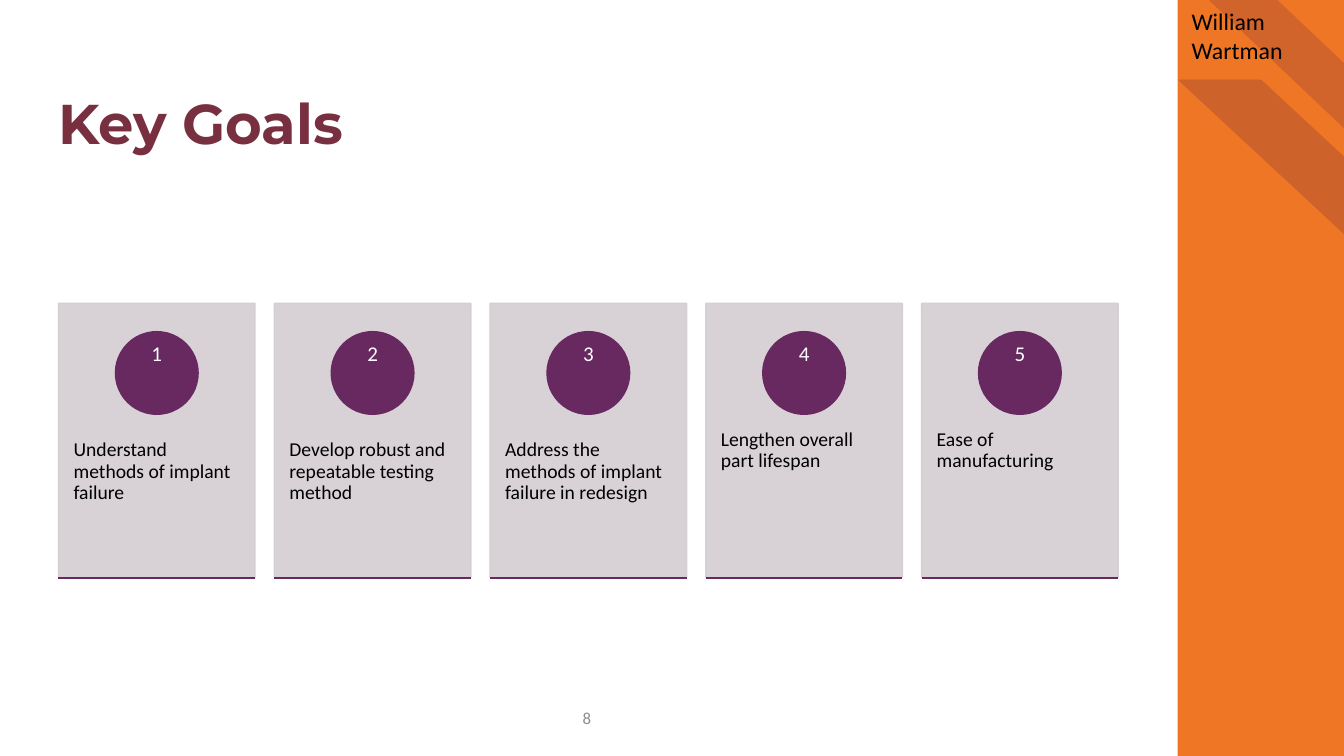
from dataclasses import dataclass

from lxml import etree
from pptx import Presentation
from pptx import util as u
from pptx.dml.color import RGBColor
from pptx.enum import shapes, text
from pptx.oxml import ns


@dataclass(frozen=True)
class Theme:
    orange: str = "EE7624"
    maroon: str = "782F40"
    purple: str = "682860"
    card: str = "D4CDD2"
    black: str = "000000"
    white: str = "FFFFFF"
    gray: str = "8C8C8C"
    heading_font: str = "Montserrat"
    body_font: str = "Calibri"
    title_size: float = 40
    name_size: float = 17
    number_size: float = 15
    goal_size: float = 14
    page_size: float = 12


THEME = Theme()
KIND = shapes.MSO_SHAPE
ALIGN = text.PP_ALIGN
ANCHOR = text.MSO_ANCHOR

GOALS = [
    "Understand methods of implant failure",
    "Develop robust and repeatable testing method",
    "Address the methods of implant failure in redesign",
    "Lengthen overall part lifespan",
    "Ease of manufacturing",
]
CARD_LEFT, CARD_TOP, CARD_W, CARD_H, CARD_PITCH = 0.58, 3.01, 1.95, 2.72, 2.14
CIRCLE, NUMBER_BOX = 0.82, 0.58


def inches(*values):
    return [u.Inches(v) for v in values]


def set_color(fill, color, opacity=100):
    fill.solid()
    fill.fore_color.rgb = RGBColor.from_string(color)
    if opacity < 100:
        clr = fill._xPr.find(".//" + ns.qn("a:srgbClr"))
        etree.SubElement(clr, ns.qn("a:alpha"), val=str(opacity * 1000))


def add_shape(s, kind, box, color, opacity=100, outlined=False):
    sp = s.shapes.add_shape(kind, *inches(*box))
    sp.shadow.inherit = False
    set_color(sp.fill, color, opacity)
    if outlined:
        sp.line.width = u.Pt(1)
        set_color(sp.line.fill, color, opacity)
    else:
        sp.line.fill.background()
    return sp


def add_stripe(s, box, opacity, inner=0.5):
    sp = add_shape(s, KIND.DIAGONAL_STRIPE, box, THEME.maroon, opacity)
    sp.adjustments[0] = inner
    sp._element.spPr.xfrm.set("flipH", "1")


def add_rule(s, x, y, width):
    line = s.shapes.add_connector(
        shapes.MSO_CONNECTOR.STRAIGHT, *inches(x, y, x + width, y))
    line.line.width = u.Pt(1.5)
    set_color(line.line.fill, THEME.purple)
    etree.SubElement(line._element.spPr, ns.qn("a:effectLst"))


def add_text(s, box, words, size, color, font=THEME.body_font, bold=False,
             align=ALIGN.LEFT, anchor=ANCHOR.TOP, insets=(0.1, 0.05),
             spacing=1.0):
    tf = s.shapes.add_textbox(*inches(*box)).text_frame
    tf.word_wrap = True
    tf.vertical_anchor = anchor
    tf.margin_left = tf.margin_right = u.Inches(insets[0])
    tf.margin_top = tf.margin_bottom = u.Inches(insets[1])
    p = tf.paragraphs[0]
    p.alignment = align
    p.line_spacing = spacing
    r = p.add_run()
    r.text = words
    r.font.name = font
    r.font.size = u.Pt(size)
    r.font.bold = bold
    r.font.color.rgb = RGBColor.from_string(color)


def add_sidebar(s):
    add_shape(s, KIND.RECTANGLE, (11.68, 0, 1.65, 7.5), THEME.orange)
    add_stripe(s, (11.68, 0.79, 1.68, 1.56), 28, 0.507)
    add_stripe(s, (11.99, 0, 1.36, 1.29), 25)


def add_goal(s, index, goal):
    x = CARD_LEFT + index * CARD_PITCH
    center = x + CARD_W / 2
    add_shape(s, KIND.RECTANGLE, (x, CARD_TOP, CARD_W, CARD_H),
              THEME.card, 90, outlined=True)
    add_text(s, (x, 4.05, CARD_W, 1.63), goal, THEME.goal_size, THEME.black,
             insets=(0.15, 0.36), spacing=0.9)
    add_shape(s, KIND.OVAL, (center - CIRCLE / 2, 3.29, CIRCLE, CIRCLE),
              THEME.purple, outlined=True)
    add_text(s, (center - NUMBER_BOX / 2, 3.4, NUMBER_BOX, NUMBER_BOX),
             str(index + 1), THEME.number_size, THEME.white,
             align=ALIGN.CENTER, insets=(0.06, 0.01), spacing=0.9)
    add_rule(s, x, CARD_TOP + CARD_H, CARD_W)


def main():
    prs = Presentation()
    prs.slide_width, prs.slide_height = inches(13.33, 7.5)
    s = prs.slides.add_slide(prs.slide_layouts[6])

    # Sidebar, page number and title
    add_sidebar(s)
    add_text(s, (5.42, 6.97, 0.8, 0.3), "8", THEME.page_size, THEME.gray,
             align=ALIGN.CENTER, anchor=ANCHOR.MIDDLE)
    add_text(s, (0.58, 0.5, 10.5, 1.05), "Key Goals", THEME.title_size,
             THEME.maroon, font=THEME.heading_font, bold=True,
             anchor=ANCHOR.BOTTOM, insets=(0, 0), spacing=0.9)

    # Goal cards
    for index, goal in enumerate(GOALS):
        add_goal(s, index, goal)

    # Presenter
    add_text(s, (11.72, 0.02, 1.57, 0.96), "William Wartman",
             THEME.name_size, THEME.black)

    prs.save("out.pptx")


if __name__ == "__main__":
    main()
